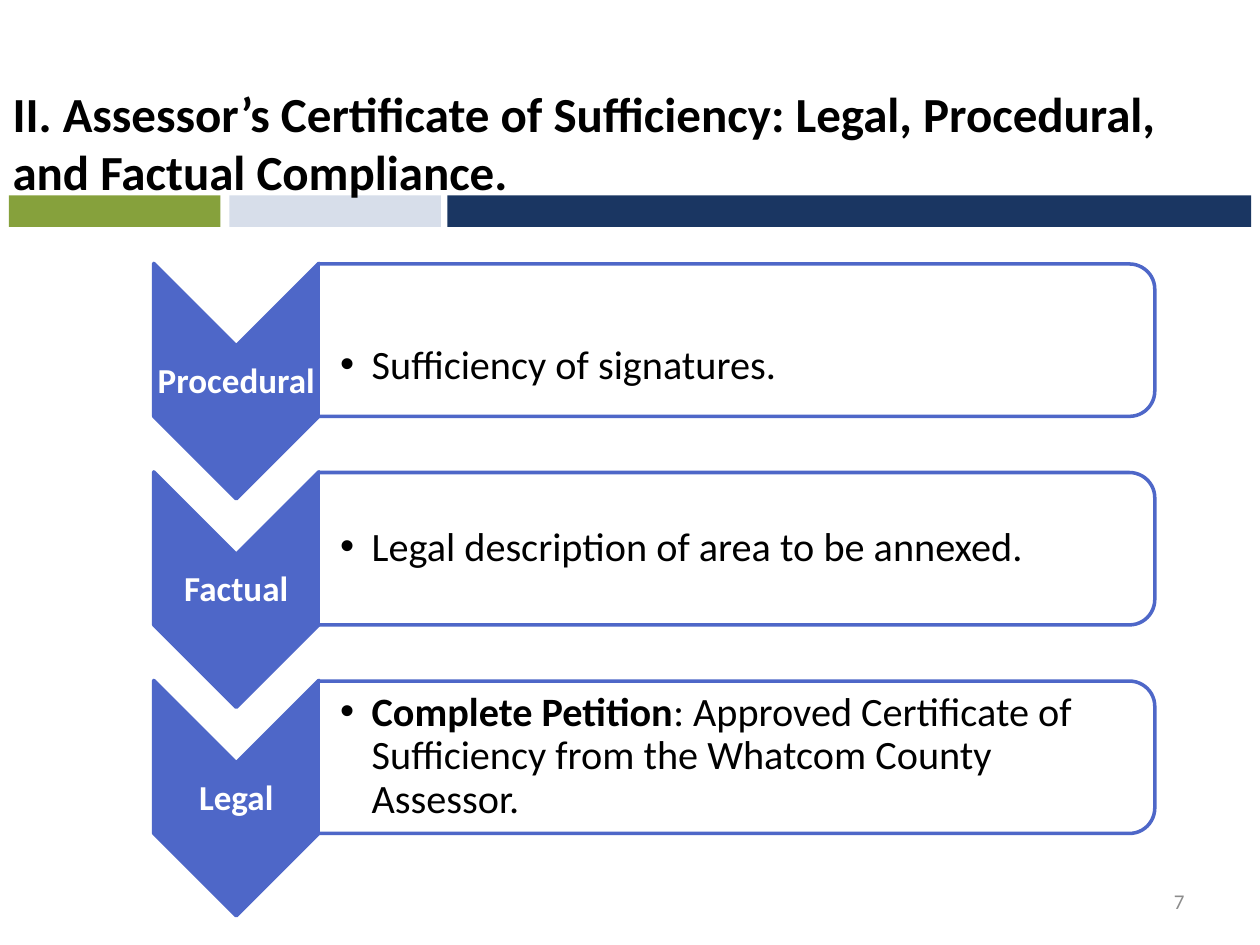
from dataclasses import dataclass

import pptx
import pptx.dml.color
import pptx.enum.shapes
import pptx.enum.text
import pptx.oxml
import pptx.oxml.ns
import pptx.util
from pptx.util import Inches

RGBColor = pptx.dml.color.RGBColor
MSO_SHAPE = pptx.enum.shapes.MSO_SHAPE
PP_ALIGN = pptx.enum.text.PP_ALIGN
MSO_ANCHOR = pptx.enum.text.MSO_ANCHOR

NAVY = RGBColor(0x1A, 0x36, 0x62)
GREEN = RGBColor(0x86, 0xA1, 0x3C)
PALE_BLUE = RGBColor(0xD7, 0xDE, 0xEA)
BLUE = RGBColor(0x4E, 0x67, 0xC8)
GRAY = RGBColor(0x8C, 0x8C, 0x8C)
BLACK = RGBColor(0, 0, 0)
WHITE = RGBColor(255, 255, 255)

FIRST_ROW_TOP = 2.09
ROW_PITCH = 1.655


@dataclass
class Box:
    left: float
    top: float
    width: float
    height: float

    def lengths(self) -> list:
        return [Inches(v) for v in (self.left, self.top, self.width, self.height)]


@dataclass
class Bar:
    left: float
    width: float
    color: RGBColor


@dataclass
class Run:
    text: str
    bold: bool = False


@dataclass
class Step:
    label: str
    detail: list[Run]
    top_margin: float = 0.02


BARS = [Bar(3.55, 6.38, NAVY), Bar(0.07, 1.68, GREEN), Bar(1.82, 1.68, PALE_BLUE)]
STEPS = [
    Step("Procedural", [Run("Sufficiency of signatures.")], 0.44),
    Step("Factual", [Run("Legal description of area to be annexed.")]),
    Step("Legal", [
        Run("Complete Petition", True),
        Run(": Approved Certificate of Sufficiency from the Whatcom County Assessor."),
    ]),
]


def apply_format(target, values: dict) -> None:
    for name, value in values.items():
        setattr(target, name, value)


def write_text(shape, runs: list[Run], size: float, color: RGBColor,
               frame_format: dict, paragraph_format: dict):
    frame = shape.text_frame
    apply_format(frame, {"word_wrap": True,
                         "auto_size": pptx.enum.text.MSO_AUTO_SIZE.NONE, **frame_format})
    paragraph = frame.paragraphs[0]
    apply_format(paragraph, paragraph_format)
    for item in runs:
        run = paragraph.add_run()
        run.text = item.text
        apply_format(run.font, {"name": "Calibri", "size": pptx.util.Pt(size),
                                "bold": item.bold})
        run.font.color.rgb = color
    return paragraph


def margins(left: float, top: float, right: float, bottom: float) -> dict:
    return {"margin_left": Inches(left), "margin_top": Inches(top),
            "margin_right": Inches(right), "margin_bottom": Inches(bottom)}


def add_block(slide, kind, box: Box, fill: RGBColor, line: RGBColor | None = None,
              rotation: float = 0) -> None:
    shape = slide.shapes.add_shape(kind, *box.lengths())
    shape.shadow.inherit = False
    shape.rotation = rotation
    shape.fill.solid()
    shape.fill.fore_color.rgb = fill
    if line is None:
        shape.line.fill.background()
    else:
        shape.line.color.rgb = line
        shape.line.width = pptx.util.Pt(2)


def add_bullet(paragraph) -> None:
    properties = paragraph._p.get_or_add_pPr()
    apply_values = {"marL": Inches(0.25), "indent": -Inches(0.25)}
    for name, value in apply_values.items():
        properties.set(name, str(int(value)))
    namespace = pptx.oxml.ns.nsdecls("a")
    properties.append(pptx.oxml.parse_xml(f'<a:buFont {namespace} typeface="Arial"/>'))
    properties.append(pptx.oxml.parse_xml(f'<a:buChar {namespace} char="•"/>'))


def add_step(slide, step: Step, top: float) -> None:
    add_block(slide, MSO_SHAPE.CHEVRON, Box(0.94, top + 0.28, 1.87, 1.31),
              BLUE, BLUE, 90)
    label = slide.shapes.add_textbox(*Box(1.22, top + 0.66, 1.31, 0.56).lengths())
    write_text(label, [Run(step.label, True)], 20, WHITE,
               {"vertical_anchor": MSO_ANCHOR.MIDDLE, **margins(0.01, 0.01, 0.01, 0.01)},
               {"alignment": PP_ALIGN.CENTER, "line_spacing": 0.9})
    add_block(slide, MSO_SHAPE.ROUND_2_SAME_RECTANGLE,
              Box(5.24, top - 2.71, 1.21, 6.64), WHITE, BLUE, 90)
    detail = slide.shapes.add_textbox(*Box(2.52, top + 0.06, 6.59, 1.09).lengths())
    paragraph = write_text(
        detail, step.detail, 23, BLACK,
        {"vertical_anchor": MSO_ANCHOR.MIDDLE,
         **margins(0.18, step.top_margin, 0.02, 0.02)},
        {"level": 1, "line_spacing": 0.9})
    add_bullet(paragraph)


def add_title(slide) -> None:
    title = slide.shapes.title
    apply_format(title, dict(zip(("left", "top", "width", "height"),
                                 Box(0, 0.61, 9.77, 1.04).lengths())))
    write_text(title,
               [Run("II. Assessor’s Certificate of Sufficiency: "
                    "Legal, Procedural, and Factual Compliance.", True)],
               28, BLACK, {"vertical_anchor": MSO_ANCHOR.TOP},
               {"alignment": PP_ALIGN.LEFT})
    slide.shapes._spTree.append(title._element)


def main() -> None:
    presentation = pptx.Presentation()
    apply_format(presentation, {"slide_width": Inches(10), "slide_height": Inches(7.5)})
    slide = presentation.slides.add_slide(presentation.slide_layouts[5])
    for bar in BARS:
        add_block(slide, MSO_SHAPE.RECTANGLE, Box(bar.left, 1.55, bar.width, 0.25),
                  bar.color)
    add_title(slide)
    number = slide.shapes.add_textbox(*Box(7.17, 6.95, 2.33, 0.4).lengths())
    write_text(number, [Run("7")], 12, GRAY, {"vertical_anchor": MSO_ANCHOR.MIDDLE},
               {"alignment": PP_ALIGN.RIGHT})
    for index, step in enumerate(STEPS):
        add_step(slide, step, FIRST_ROW_TOP + index * ROW_PITCH)
    presentation.save("out.pptx")


if __name__ == "__main__":
    main()
